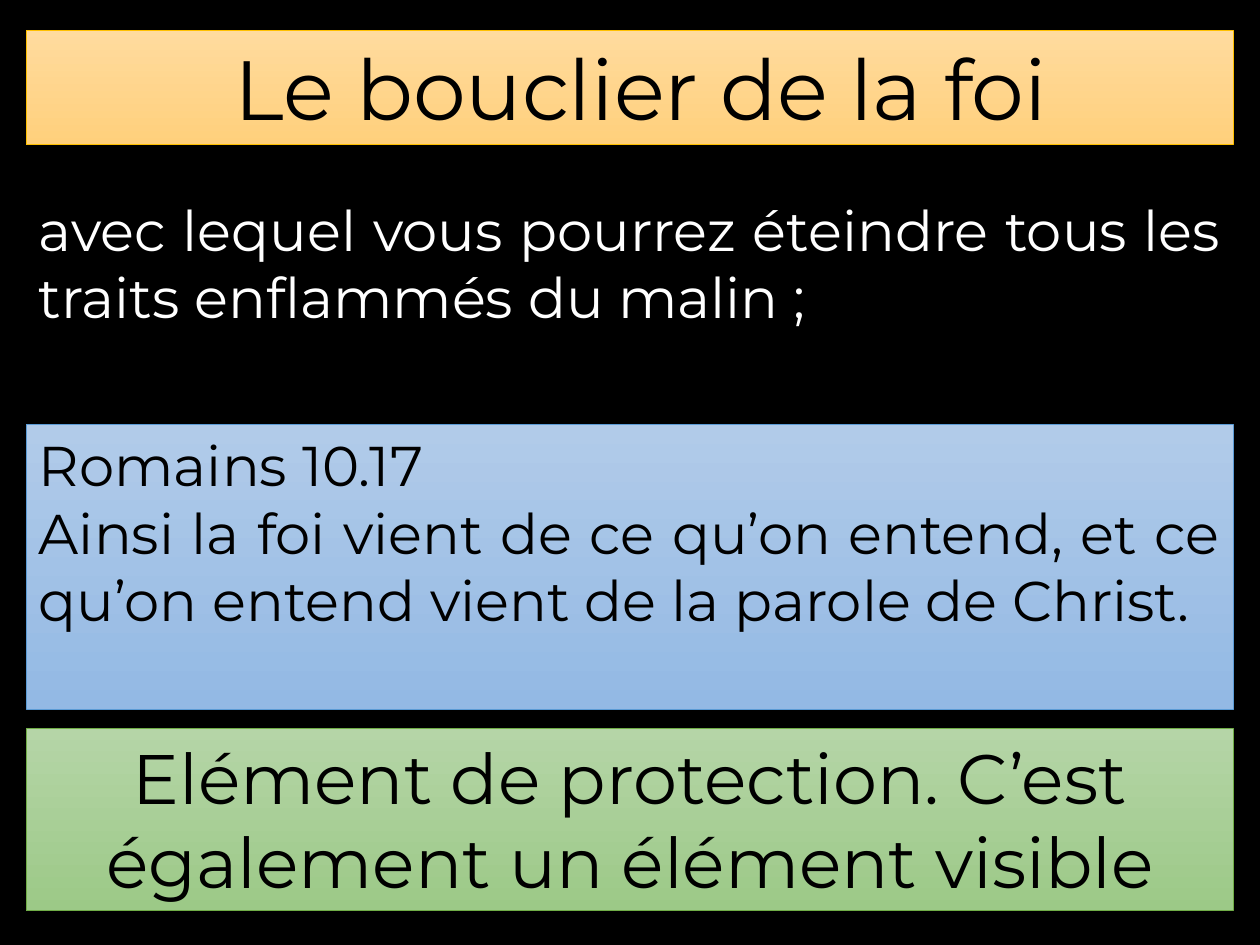
from pptx import Presentation
from pptx.dml.color import RGBColor
from pptx.enum.shapes import MSO_SHAPE
from pptx.enum.text import MSO_ANCHOR, MSO_AUTO_SIZE, PP_ALIGN
from pptx.util import Inches, Pt

WIDTH, HEIGHT = 10, 7.5
MARGIN = 0.21
FONT = "Montserrat"

TITLE = {
    "lines": [" Le bouclier de la foi"],
    "top": 0.24, "height": 0.91, "size": 48, "align": PP_ALIGN.CENTER,
    "gradient": ("FFDB9E", "FFD07C"), "border": "FFC000",
}
VERSE = {
    "lines": ["avec lequel vous pourrez éteindre tous les traits enflammés du malin ;"],
    "top": 1.5, "height": 1.18, "size": 32, "align": PP_ALIGN.JUSTIFY, "color": "FFFFFF",
}
PANELS = [
    {
        "lines": [
            "Romains 10.17",
            "Ainsi la foi vient de ce qu’on entend, et ce qu’on entend vient de la parole de Christ.",
        ],
        "top": 3.37, "height": 2.26, "size": 32, "align": PP_ALIGN.JUSTIFY,
        "gradient": ("B1CBE9", "93B9E4"), "border": "5B9BD5",
    },
    {
        "lines": ["Elément de protection. C’est également un élément visible"],
        "top": 5.78, "height": 1.45, "size": 40, "align": PP_ALIGN.CENTER,
        "gradient": ("B5D5A7", "9CC987"), "border": "70AD47",
    },
]


def rgb(value):
    return RGBColor.from_string(value)


def place(content):
    return [Inches(n) for n in (MARGIN, content["top"], WIDTH - 2 * MARGIN, content["height"])]


def write_text(shape, lines, *, size, align, color="000000"):
    frame = shape.text_frame
    frame.word_wrap = True
    frame.auto_size = MSO_AUTO_SIZE.NONE
    frame.vertical_anchor = MSO_ANCHOR.TOP
    for index, line in enumerate(lines):
        paragraph = frame.add_paragraph() if index else frame.paragraphs[0]
        paragraph.alignment = align
        run = paragraph.add_run()
        run.text = line
        run.font.name = FONT
        run.font.size = Pt(size)
        run.font.color.rgb = rgb(color)


def style_panel(shape, gradient, border):
    shape.fill.gradient()
    shape.fill.gradient_angle = 270
    for stop, color in zip(shape.fill.gradient_stops, gradient):
        stop.color.rgb = rgb(color)
    shape.line.color.rgb = rgb(border)
    shape.line.width = Pt(0.5)


def fill_block(shape, content):
    if "gradient" in content:
        style_panel(shape, content["gradient"], content["border"])
    write_text(shape, content["lines"], size=content["size"], align=content["align"],
               color=content.get("color", "000000"))


def main():
    presentation = Presentation()
    presentation.slide_width, presentation.slide_height = Inches(WIDTH), Inches(HEIGHT)
    slide = presentation.slides.add_slide(presentation.slide_layouts[5])
    slide.background.fill.solid()
    slide.background.fill.fore_color.rgb = rgb("000000")

    title = slide.shapes.title
    title.left, title.top, title.width, title.height = place(TITLE)
    fill_block(title, TITLE)

    fill_block(slide.shapes.add_textbox(*place(VERSE)), VERSE)

    for content in PANELS:
        panel = slide.shapes.add_shape(MSO_SHAPE.RECTANGLE, *place(content))
        panel.shadow.inherit = False
        fill_block(panel, content)

    presentation.save("out.pptx")


if __name__ == "__main__":
    main()
